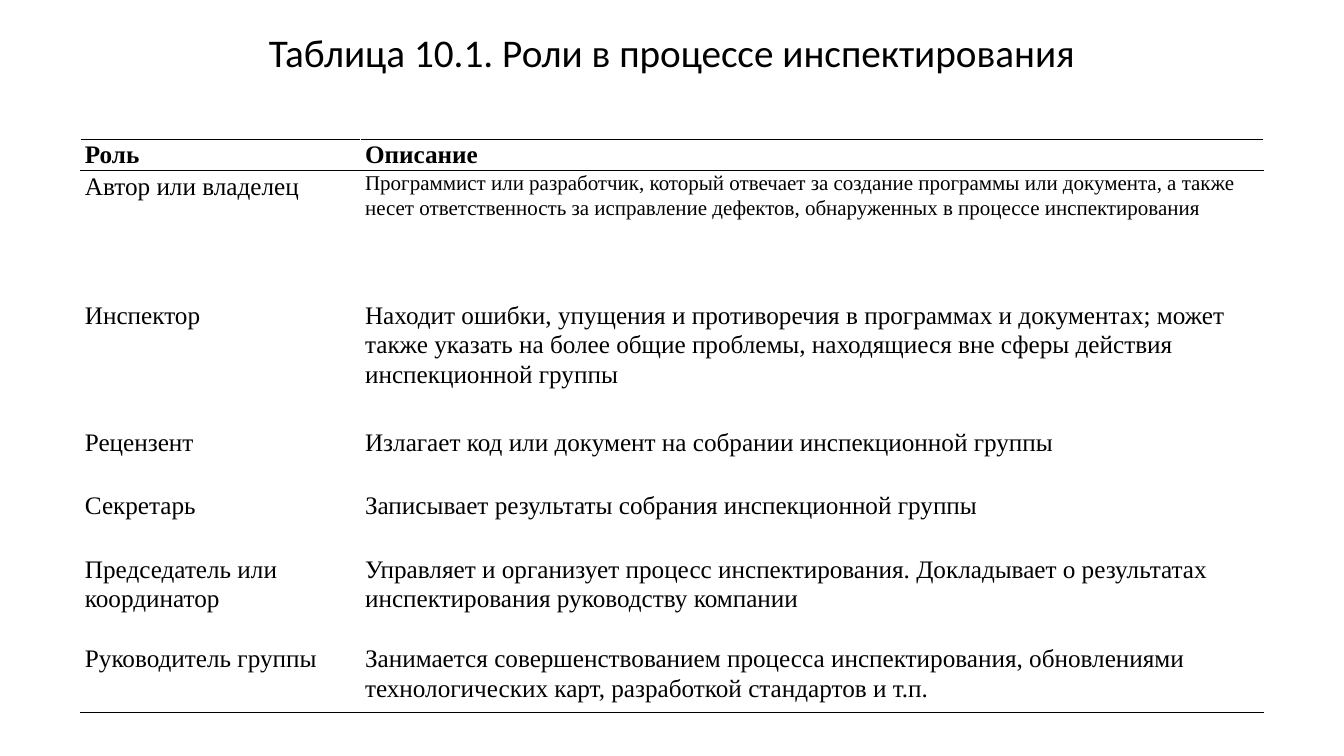
from dataclasses import dataclass

from lxml import etree
from pptx import Presentation
from pptx.dml.color import RGBColor
from pptx.enum import text as tx
from pptx.oxml import ns
from pptx.util import Cm, Pt


@dataclass(frozen=True)
class Theme:
    ink: str = "000000"
    paper: str = "FFFFFF"
    head: str = "Calibri"
    body: str = "Times New Roman"
    title: float = 28
    text: float = 18
    small: float = 15
    rule: float = 1
    gap: float = 21.3


@dataclass(frozen=True)
class Row:
    height: float
    role: tuple[str, ...]
    duty: tuple[str, ...]
    size: float = Theme.text
    bold: bool = False
    edges: str = ""


THEME = Theme()
TITLE = "Таблица 10.1. Роли в процессе инспектирования"
COLS = (7.06, 22.76)
ROWS = (
    Row(0.79, ("Роль",), ("Описание",), bold=True, edges="TB"),
    Row(3.25, ("Автор или владелец",),
        ("Программист или разработчик, который отвечает за создание программы "
         "или документа, а также несет ответственность за исправление дефектов, "
         "обнаруженных в процессе инспектирования",),
        size=THEME.small, edges="T"),
    Row(3.2, ("Инспектор",),
        ("Находит ошибки, упущения и противоречия в программах и документах; "
         "может также указать на более общие проблемы, находящиеся вне сферы "
         "действия инспекционной группы",)),
    Row(1.6, ("Рецензент",),
        ("Излагает код или документ на собрании инспекционной группы",)),
    Row(1.6, ("Секретарь",),
        ("Записывает результаты собрания инспекционной группы",)),
    Row(4, ("Председатель или координатор", "Руководитель группы"),
        ("Управляет и организует процесс инспектирования. Докладывает "
         "о результатах инспектирования руководству компании",
         "Занимается совершенствованием процесса инспектирования, обновлениями "
         "технологических карт, разработкой стандартов и т.п."),
        edges="B"),
)


def style(par, name: str, size: float, bold: bool = False) -> None:
    font = par.font
    font.name, font.size, font.bold = name, Pt(size), bold
    font.color.rgb = RGBColor.from_string(THEME.ink)


def rule(cell, edge: str) -> None:
    """Draw one cell border: T for top, B for bottom."""
    line = etree.Element(ns.qn(f"a:ln{edge}"), w=str(Pt(THEME.rule)))
    fill = etree.SubElement(line, ns.qn("a:solidFill"))
    etree.SubElement(fill, ns.qn("a:srgbClr"), val=THEME.ink)
    cell._tc.get_or_add_tcPr().append(line)


def write(cell, lines: tuple[str, ...], size: float, row: Row) -> None:
    cell.margin_left = cell.margin_right = Cm(0.11)
    cell.margin_top = cell.margin_bottom = 0
    # Borders come before the fill in the cell properties
    for edge in row.edges:
        rule(cell, edge)
    cell.fill.solid()
    cell.fill.fore_color.rgb = RGBColor.from_string(THEME.paper)
    cell.text_frame.text = "\n".join(lines)
    pars = cell.text_frame.paragraphs
    for par in pars:
        style(par, THEME.body, size, row.bold)
        par.line_spacing = 1.07
    for par in pars[:-1]:
        par.space_after = Pt(THEME.gap)


def head(slide) -> None:
    box = slide.shapes.title
    box.left, box.top, box.width, box.height = Cm(2.33), Cm(0.76), Cm(29.2), Cm(1.32)
    frame = box.text_frame
    frame.text = TITLE
    frame.word_wrap = True
    frame.auto_size = tx.MSO_AUTO_SIZE.NONE
    frame.vertical_anchor = tx.MSO_ANCHOR.MIDDLE
    par = frame.paragraphs[0]
    par.alignment = tx.PP_ALIGN.CENTER
    par.line_spacing = 0.8
    style(par, THEME.head, THEME.title)


def grid(slide) -> None:
    high = sum(row.height for row in ROWS)
    table = slide.shapes.add_table(len(ROWS), len(COLS), Cm(2.03), Cm(3.51),
                                   Cm(sum(COLS)), Cm(high)).table
    table.first_row = table.horz_banding = False
    for col, width in zip(table.columns, COLS):
        col.width = Cm(width)
    for i, row in enumerate(ROWS):
        table.rows[i].height = Cm(row.height)
        write(table.cell(i, 0), row.role, THEME.text, row)
        write(table.cell(i, 1), row.duty, row.size, row)


def main() -> None:
    deck = Presentation()
    deck.slide_width, deck.slide_height = Cm(33.87), Cm(19.05)
    # Title-only layout
    slide = deck.slides.add_slide(deck.slide_layouts[5])
    head(slide)
    grid(slide)
    deck.save("out.pptx")


if __name__ == "__main__":
    main()
